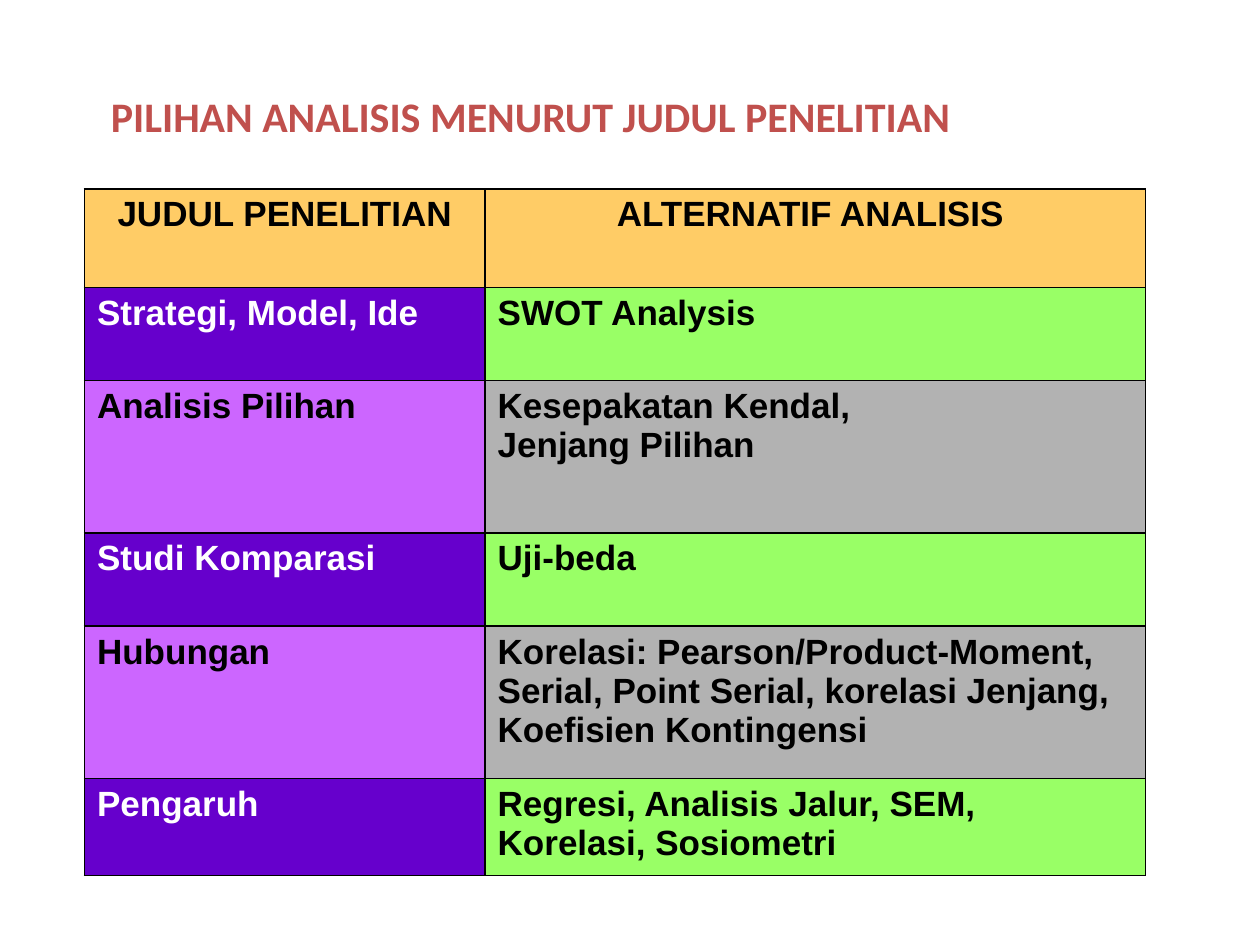
from dataclasses import dataclass
from typing import Any

from lxml import etree
from pptx import Presentation
from pptx import util as u
from pptx.dml import color
from pptx.enum import text
from pptx.oxml import ns

HUES: dict[str, str] = {
    "title": "C0504D", "head": "FFCC66", "dark": "6600CC", "light": "CC66FF",
    "green": "99FF66", "gray": "B2B2B2", "black": "000000", "white": "FFFFFF",
}


@dataclass
class Style:
    fill: str
    ink: str = "black"
    align: Any = text.PP_ALIGN.LEFT


@dataclass
class Row:
    high: float
    left: str
    right: str


HEAD = Style("head", align=text.PP_ALIGN.CENTER)
BANDS = [(Style("dark", "white"), Style("green")), (Style("light"), Style("gray"))]
WIDTHS = [3.18, 5.24]
ROWS = [
    Row(0.78, "JUDUL PENELITIAN", "ALTERNATIF ANALISIS "),
    Row(0.74, "Strategi, Model, Ide", "SWOT Analysis"),
    Row(1.21, "Analisis Pilihan", "Kesepakatan Kendal,\nJenjang Pilihan"),
    Row(0.74, "Studi Komparasi", "Uji-beda"),
    Row(1.21, "Hubungan", "Korelasi: Pearson/Product-Moment, Serial, Point Serial, "
        "korelasi Jenjang, Koefisien Kontingensi"),
    Row(0.77, "Pengaruh", "Regresi, Analisis Jalur, SEM, Korelasi, Sosiometri"),
]


def rgb(name: str) -> color.RGBColor:
    return color.RGBColor.from_string(HUES[name])


def add_run(para: Any, words: str, face: str, size: int, ink: str) -> None:
    run = para.add_run()
    run.text = words
    run.font.name = face
    run.font.size = u.Pt(size)
    run.font.bold = True
    run.font.color.rgb = rgb(ink)


def add_edges(cell: Any) -> None:
    props = cell._tc.get_or_add_tcPr()
    for side in ("L", "R", "T", "B"):
        line = etree.SubElement(props, ns.qn(f"a:ln{side}"), w=str(u.Pt(1)))
        fill = etree.SubElement(line, ns.qn("a:solidFill"))
        etree.SubElement(fill, ns.qn("a:srgbClr"), val=HUES["black"])


def fill_cell(cell: Any, words: str, style: Style) -> None:
    add_edges(cell)
    cell.fill.solid()
    cell.fill.fore_color.rgb = rgb(style.fill)
    frame = cell.text_frame
    for i, part in enumerate(words.split("\n")):
        para = frame.add_paragraph() if i else frame.paragraphs[0]
        para.alignment = style.align
        add_run(para, part, "Arial", 20, style.ink)


def add_title(slide: Any, words: str) -> None:
    title = slide.shapes.title
    title.left, title.top = u.Inches(0.78), u.Inches(0.67)
    title.width, title.height = u.Inches(8.22), u.Inches(0.5)
    frame = title.text_frame
    frame.word_wrap = True
    frame.auto_size = text.MSO_AUTO_SIZE.NONE
    para = frame.paragraphs[0]
    para.alignment = text.PP_ALIGN.LEFT
    add_run(para, words, "Calibri", 24, "title")


def add_grid(slide: Any) -> None:
    high = sum(row.high for row in ROWS)
    grid = slide.shapes.add_table(
        len(ROWS), len(WIDTHS), u.Inches(0.67), u.Inches(1.5),
        u.Inches(sum(WIDTHS)), u.Inches(high)).table
    for col, width in zip(grid.columns, WIDTHS):
        col.width = u.Inches(width)
    for i, row in enumerate(ROWS):
        grid.rows[i].height = u.Inches(row.high)
        pair = BANDS[(i - 1) % 2] if i else (HEAD, HEAD)
        for j, words in enumerate((row.left, row.right)):
            fill_cell(grid.cell(i, j), words, pair[j])


def main() -> None:
    deck = Presentation()
    deck.slide_width, deck.slide_height = u.Inches(10), u.Inches(7.5)
    slide = deck.slides.add_slide(deck.slide_layouts[5])
    add_title(slide, "PILIHAN ANALISIS MENURUT JUDUL PENELITIAN")
    add_grid(slide)
    deck.save("out.pptx")


if __name__ == "__main__":
    main()
